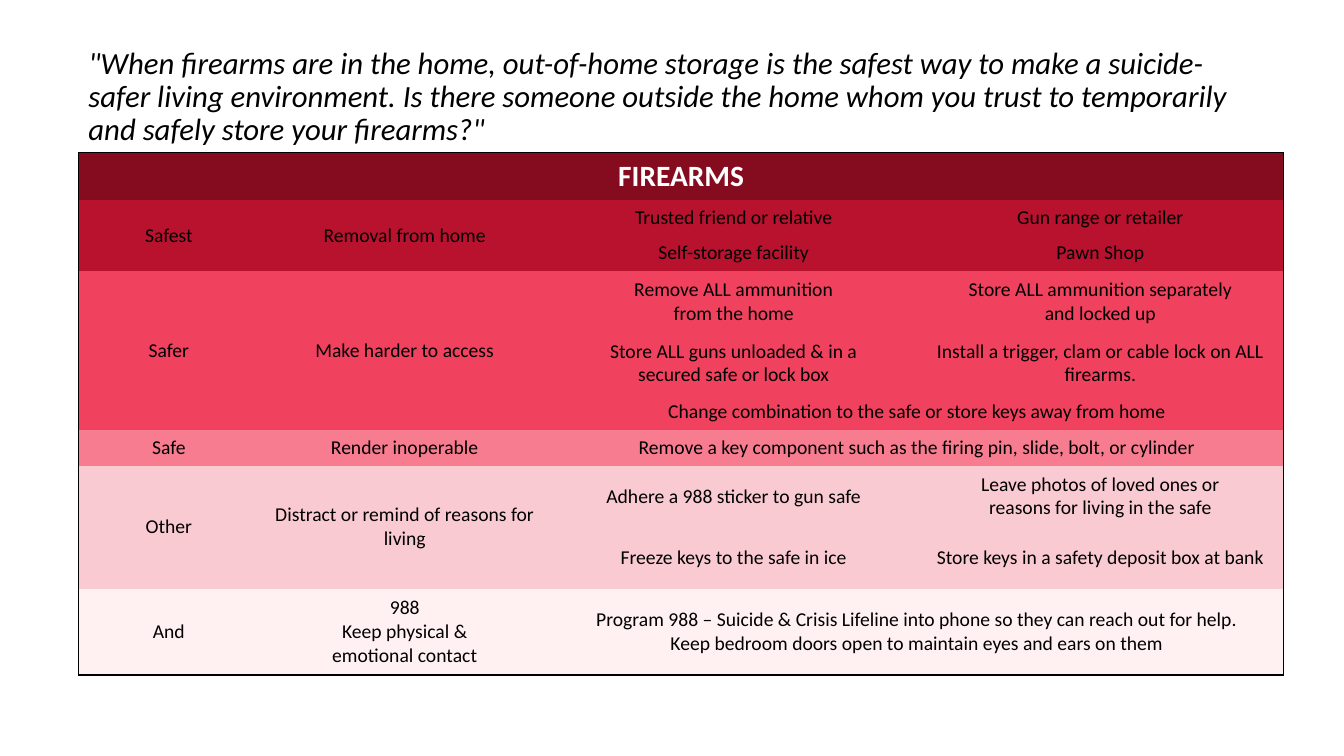
from lxml.etree import SubElement
from pptx import Presentation
from pptx.dml.color import RGBColor
from pptx.enum.text import MSO_ANCHOR, PP_ALIGN
from pptx.oxml.ns import qn
from pptx.util import Cm, Pt

QUOTE = (
    '"When firearms are in the home, out-of-home storage is the safest way to make '
    "a suicide-safer living environment. Is there someone outside the home whom you "
    'trust to temporarily and safely store your firearms?"'
)
COLUMN_WIDTHS = [4.55, 7.34, 9.24, 9.24]
ROW_HEIGHTS = [1.19, 0.9, 0.9, 1.55, 1.55, 0.9, 0.9, 1.55, 1.55, 2.18]
ROW_FILLS = (
    ["850B1F"] + ["B8122E"] * 2 + ["F0415E"] * 3 + ["F77C90"] + ["FACAD2"] * 2 + ["FFF0F2"]
)
# Row, column, row span, column span, text
ENTRIES = [
    (0, 0, 1, 4, "FIREARMS"),
    (1, 0, 2, 1, "Safest"),
    (1, 1, 2, 1, "Removal from home"),
    (1, 2, 1, 1, "Trusted friend or relative"),
    (1, 3, 1, 1, "Gun range or retailer"),
    (2, 2, 1, 1, "Self-storage facility"),
    (2, 3, 1, 1, "Pawn Shop"),
    (3, 0, 3, 1, "Safer"),
    (3, 1, 3, 1, "Make harder to access"),
    (3, 2, 1, 1, "Remove ALL ammunition\nfrom the home"),
    (3, 3, 1, 1, "Store ALL ammunition separately\nand locked up"),
    (4, 2, 1, 1, "Store ALL guns unloaded & in a\nsecured safe or lock box"),
    (4, 3, 1, 1, "Install a trigger, clam or cable lock on ALL firearms."),
    (5, 2, 1, 2, "Change combination to the safe or store keys away from home"),
    (6, 0, 1, 1, "Safe"),
    (6, 1, 1, 1, "Render inoperable"),
    (6, 2, 1, 2, "Remove a key component such as the firing pin, slide, bolt, or cylinder"),
    (7, 0, 2, 1, "Other"),
    (7, 1, 2, 1, "Distract or remind of reasons for living"),
    (7, 2, 1, 1, "Adhere a 988 sticker to gun safe"),
    (7, 3, 1, 1, "Leave photos of loved ones or\nreasons for living in the safe"),
    (8, 2, 1, 1, "Freeze keys to the safe in ice"),
    (8, 3, 1, 1, "Store keys in a safety deposit box at bank"),
    (9, 0, 1, 1, "And"),
    (9, 1, 1, 1, "988\nKeep physical &\nemotional contact"),
    (9, 2, 1, 2, "Program 988 – Suicide & Crisis Lifeline into phone so they can reach out "
                 "for help.\nKeep bedroom doors open to maintain eyes and ears on them"),
]
QUOTE_FORMAT = {"name": "Calibri", "size": Pt(22), "italic": True}
HEADING_FORMAT = {"name": "Calibri", "size": Pt(21), "bold": True}
BODY_FORMAT = {"name": "Calibri", "size": Pt(14), "bold": False}


def color(value):
    return RGBColor.from_string(value)


def write_text(frame, text, font_format, font_color, alignment):
    """Write each line of the text as one formatted paragraph."""
    frame.text = text
    for paragraph in frame.paragraphs:
        paragraph.alignment = alignment
        for span in paragraph.runs:
            span.font.color.rgb = color(font_color)
            for name, value in font_format.items():
                setattr(span.font, name, value)


def add_quote(page):
    box = page.shapes.add_textbox(Cm(1.98), Cm(1.02), Cm(30.12), Cm(2.87))
    frame = box.text_frame
    frame.word_wrap = True
    frame.vertical_anchor = MSO_ANCHOR.MIDDLE
    write_text(frame, QUOTE, QUOTE_FORMAT, "000000", PP_ALIGN.LEFT)
    frame.paragraphs[0].line_spacing = 0.9


def set_borders(cell, outer_sides):
    """Draw a thin black line on the outer sides and none on the others."""
    properties = cell._tc.get_or_add_tcPr()
    for side, is_outer in outer_sides.items():
        line = SubElement(properties, qn(f"a:ln{side}"), w=str(Pt(1)))
        if is_outer:
            fill = SubElement(line, qn("a:solidFill"))
            SubElement(fill, qn("a:srgbClr"), val="000000")
        else:
            SubElement(line, qn("a:noFill"))


def style_cells(table):
    last_row, last_column = len(ROW_HEIGHTS), len(COLUMN_WIDTHS)
    for row, row_fill in enumerate(ROW_FILLS):
        for column in range(last_column):
            cell = table.cell(row, column)
            height = cell.span_height if cell.is_merge_origin else 1
            width = cell.span_width if cell.is_merge_origin else 1
            set_borders(cell, {
                "L": column == 0,
                "R": column + width == last_column,
                "T": row == 0,
                "B": row + height == last_row,
            })
            cell.fill.solid()
            cell.fill.fore_color.rgb = color(row_fill)


def add_safety_table(page):
    frame = page.shapes.add_table(
        len(ROW_HEIGHTS), len(COLUMN_WIDTHS), Cm(1.98), Cm(3.84),
        Cm(sum(COLUMN_WIDTHS)), Cm(sum(ROW_HEIGHTS)),
    )
    table = frame.table
    table.horz_banding = False
    for column, width in zip(table.columns, COLUMN_WIDTHS):
        column.width = Cm(width)
    for row, height in zip(table.rows, ROW_HEIGHTS):
        row.height = Cm(height)
    for row, column, height, width, text in ENTRIES:
        cell = table.cell(row, column)
        if height > 1 or width > 1:
            cell.merge(table.cell(row + height - 1, column + width - 1))
        is_heading = row == 0
        cell.vertical_anchor = MSO_ANCHOR.BOTTOM if is_heading else MSO_ANCHOR.MIDDLE
        write_text(
            cell.text_frame, text,
            HEADING_FORMAT if is_heading else BODY_FORMAT,
            "FFFFFF" if is_heading else "000000", PP_ALIGN.CENTER,
        )
    style_cells(table)


def main():
    deck = Presentation()
    deck.slide_width, deck.slide_height = Cm(33.87), Cm(19.05)
    page = deck.slides.add_slide(deck.slide_layouts[6])
    add_quote(page)
    add_safety_table(page)
    deck.save("out.pptx")


if __name__ == "__main__":
    main()
